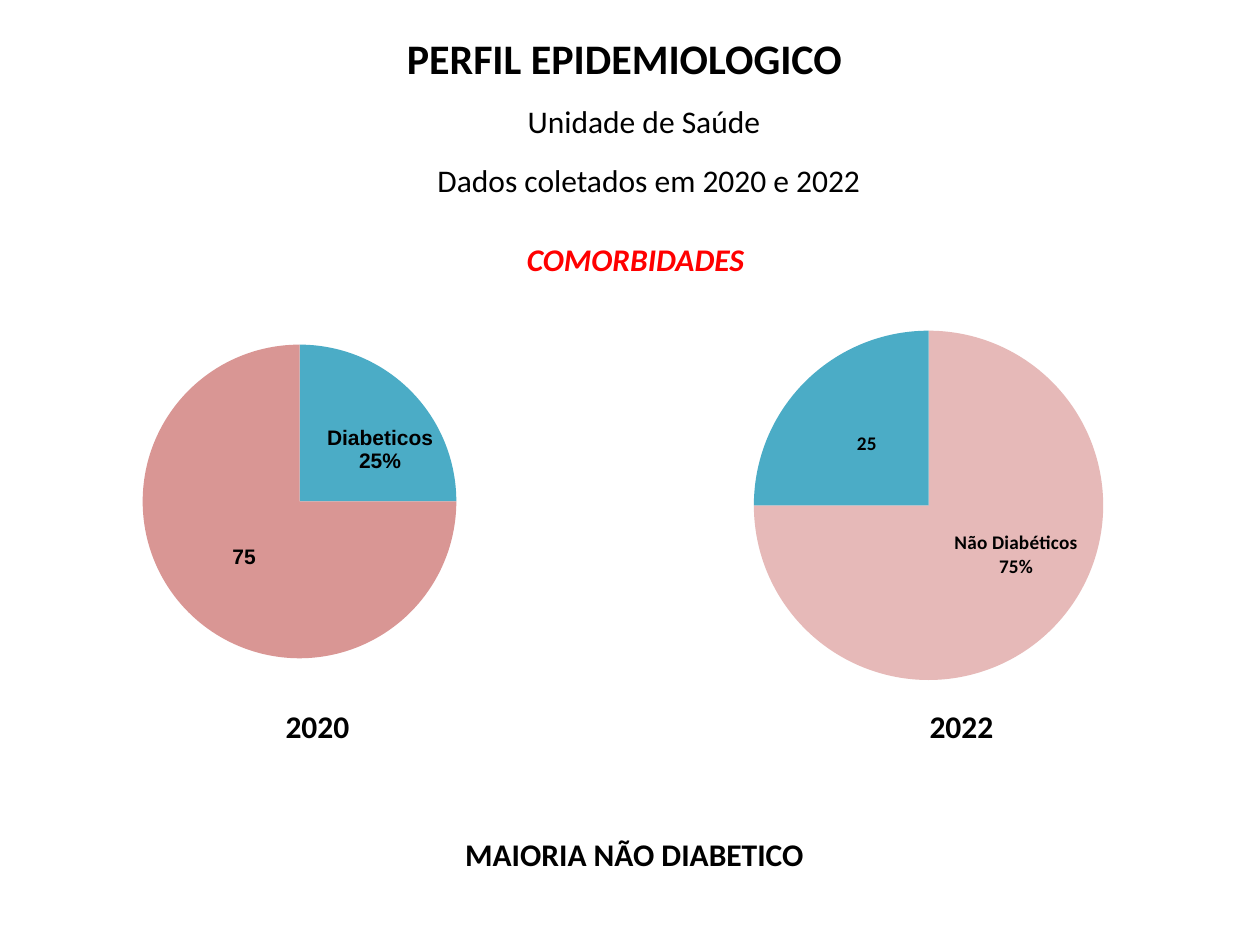
from dataclasses import dataclass

from lxml.etree import SubElement
from pptx import Presentation
from pptx.chart.data import CategoryChartData
from pptx.dml.color import RGBColor
from pptx.enum.chart import XL_CHART_TYPE, XL_LABEL_POSITION
from pptx.enum.text import MSO_ANCHOR, PP_ALIGN
from pptx.oxml import parse_xml
from pptx.oxml.ns import nsdecls, qn
from pptx.util import Emu, Pt

PX = 914400 // 126


@dataclass(frozen=True)
class Theme:
    font: str = "Calibri"
    label_font: str = "Arial"
    ink: str = "000000"
    accent: str = "FF0000"
    diabetic: str = "4BACC6"
    healthy_2020: str = "D99694"
    healthy_2022: str = "E6B9B8"
    title_size: int = 24
    body_size: int = 18
    chart_size: int = 10


THEME = Theme()


def px(*lengths):
    return [Emu(length * PX) for length in lengths]


def style(font, size, color=THEME.ink, bold=False, italic=False, name=THEME.font):
    font.name, font.size = name, Pt(size)
    font.bold, font.italic = bold, italic
    font.color.rgb = RGBColor.from_string(color)


def write(box, text, size, **look):
    """Put one centred line of text in a box or placeholder."""
    frame = box.text_frame
    frame.word_wrap = False
    frame.vertical_anchor = MSO_ANCHOR.TOP
    para = frame.paragraphs[0]
    para.alignment = PP_ALIGN.CENTER
    span = para.add_run()
    span.text = text
    style(span.font, size, **look)


def add_title(page, at, text):
    title = page.shapes.title
    title.left, title.top, title.width, title.height = px(*at)
    write(title, text, THEME.title_size, bold=True)


def add_line(page, at, text, **look):
    write(page.shapes.add_textbox(*px(*at)), text, THEME.body_size, **look)


def manual_layout(x, y, w=None, h=None):
    """Chart layout: a full inner plot area, or only a label offset."""
    layout = parse_xml(f"<c:layout {nsdecls('c')}><c:manualLayout/></c:layout>")
    settings = [("x", x), ("y", y)]
    if w is not None:
        settings = [("layoutTarget", "inner"), ("xMode", "edge"),
                    ("yMode", "edge"), *settings, ("w", w), ("h", h)]
    for tag, value in settings:
        SubElement(layout[0], qn(f"c:{tag}")).set("val", str(value))
    return layout


def label_slice(point, offset, size, font):
    """Show category and percentage on two lines, shifted from the centre."""
    label = point.data_label
    style(label.font, size, bold=True, name=font)
    label.position = XL_LABEL_POSITION.CENTER
    element = point._element.find(f"{qn('c:dLbls')}/{qn('c:dLbl')}") \
        if hasattr(point, "_element") else label._get_or_add_dLbl()
    for tag, shown in (("showVal", 0), ("showCatName", 1), ("showPercent", 1)):
        element.find(qn(f"c:{tag}")).set("val", str(shown))
    SubElement(element, qn("c:separator")).text = "\n"
    element.find(qn("c:idx")).addnext(manual_layout(*offset))


def add_pie(page, at, plot, slices, label_size, label_font):
    """Each slice is (category, value, colour, label offset)."""
    data = CategoryChartData()
    data.categories = [category for category, *_ in slices]
    data.add_series("Series 1", [value for _, value, *_ in slices])
    chart = page.shapes.add_chart(XL_CHART_TYPE.PIE, *px(*at), data).chart
    chart.has_legend = chart.has_title = False
    style(chart.font, THEME.chart_size)

    # Plot area
    area = chart._chartSpace.chart.plotArea
    for old in area.findall(qn("c:layout")):
        area.remove(old)
    area.insert(0, manual_layout(*plot))

    # Slices and their labels
    pie = chart.plots[0]
    pie.vary_by_categories = True
    for index, (_, _, color, offset) in enumerate(slices):
        point = pie.series[0].points[index]
        point.format.fill.solid()
        point.format.fill.fore_color.rgb = RGBColor.from_string(color)
        point.format.line.fill.background()
        label_slice(point, offset, label_size, label_font)


def main():
    deck = Presentation()
    deck.slide_width, deck.slide_height = px(1260, 945)
    page = deck.slides.add_slide(deck.slide_layouts[5])

    # Headings
    add_title(page, (392, 26, 465, 63), "PERFIL EPIDEMIOLOGICO")
    add_line(page, (501, 96, 286, 50), "Unidade de Saúde")
    add_line(page, (422, 155, 454, 50), "Dados coletados em 2020 e 2022")
    add_line(page, (512, 234, 247, 50), "COMORBIDADES",
             color=THEME.accent, bold=True, italic=True)

    # Pies, one for each year
    add_pie(page, (-6, 322, 630, 378), (0.05, 0.06, 0.87, 0.83),
            [("Diabeticos", 25, THEME.diabetic, (0.04, 0.01)),
             ("Não Diabeticos", 75, THEME.healthy_2020, (-0.03, 0))],
            12, THEME.label_font)
    add_pie(page, (624, 285, 648, 416), (0.03, 0.11, 0.88, 0.84),
            [("Não Diabéticos", 75, THEME.healthy_2022, (0.04, -0.03)),
             ("Diabéticos", 25, THEME.diabetic, (-0.05, -0.03))],
            11, THEME.font)

    # Years and conclusion
    for left, year in ((273, "2020"), (917, "2022")):
        add_line(page, (left, 701, 89, 50), year, bold=True)
    add_line(page, (451, 829, 367, 50), "MAIORIA NÃO DIABETICO", bold=True)

    deck.save("out.pptx")


if __name__ == "__main__":
    main()
